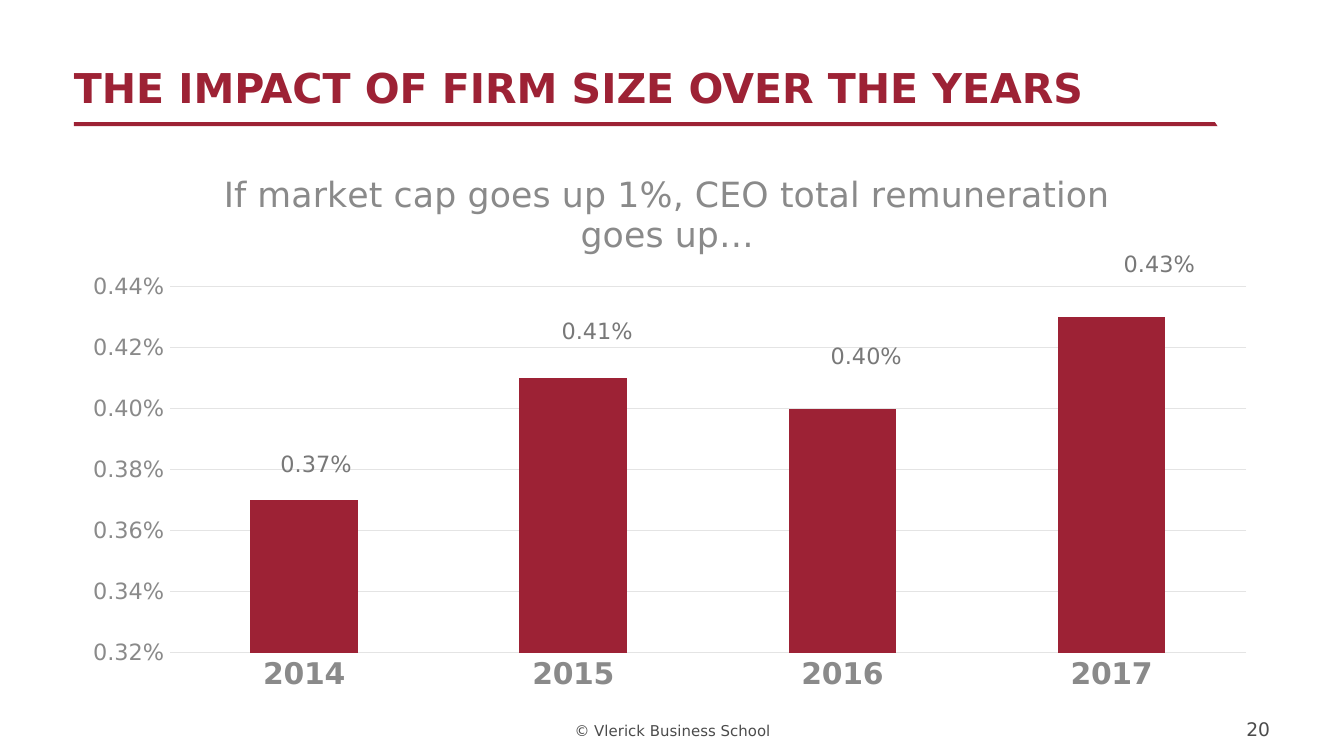
from lxml.etree import SubElement
from pptx import Presentation
from pptx.chart.data import CategoryChartData
from pptx.dml.color import RGBColor
from pptx.enum.chart import XL_CHART_TYPE, XL_LABEL_POSITION, XL_TICK_MARK
from pptx.enum.text import MSO_ANCHOR, MSO_AUTO_SIZE, PP_ALIGN
from pptx.oxml.ns import qn
from pptx.util import Inches, Pt

FONT = "DejaVu Sans"
RED = RGBColor(0x9D, 0x22, 0x35)
DARK_GRAY = RGBColor(0x4B, 0x4B, 0x4B)
AXIS_GRAY = RGBColor(0x8A, 0x8A, 0x8A)
LABEL_GRAY = RGBColor(0x78, 0x78, 0x78)
GRID_GRAY = RGBColor(0xE4, 0xE4, 0xE4)
PERCENT = "0.00%"

# Year, value, and the label's shift from the bar end as fractions of the chart
BARS = [
    ("2014", 0.0037, 0.01, -0.03),
    ("2015", 0.0041, 0.02, -0.05),
    ("2016", 0.0040, 0.02, -0.06),
    ("2017", 0.0043, 0.04, -0.06),
]


def style_font(font, size, color, bold=False):
    font.color.rgb = color
    for name, value in {"name": FONT, "size": Pt(size), "bold": bold}.items():
        setattr(font, name, value)


def fill_text(box, text, size, color, align, bold=False):
    frame = box.text_frame
    settings = {
        "word_wrap": True, "auto_size": MSO_AUTO_SIZE.NONE,
        "vertical_anchor": MSO_ANCHOR.BOTTOM,
        "margin_left": 0, "margin_right": 0, "margin_top": 0, "margin_bottom": 0,
    }
    for name, value in settings.items():
        setattr(frame, name, value)
    para = frame.paragraphs[0]
    para.alignment = align
    span = para.add_run()
    span.text = text
    style_font(span.font, size, color, bold)


def add_title(page, text):
    title = page.shapes.title
    place = {"left": 0.55, "top": 0, "width": 8.27, "height": 0.83}
    for name, value in place.items():
        setattr(title, name, Inches(value))
    fill_text(title, text, 22, RED, PP_ALIGN.LEFT, bold=True)


def add_title_rule(page):
    corners = [(0.55, 0.91), (9.04, 0.91), (9.06, 0.94), (0.55, 0.94)]
    points = [(Inches(x), Inches(y)) for x, y in corners]
    builder = page.shapes.build_freeform(*points[0])
    builder.add_line_segments(points[1:], close=True)
    rule = builder.convert_to_shape()
    rule.shadow.inherit = False
    rule.fill.solid()
    rule.fill.fore_color.rgb = RED
    rule.line.fill.background()


def add_footer(page, text, left, width, size, align):
    box = page.shapes.add_textbox(Inches(left), Inches(5.35), Inches(width), Inches(0.16))
    fill_text(box, text, size, DARK_GRAY, align)
    return box


def set_layout(element, before, **settings):
    """Place a manual layout ahead of the first child named in before."""
    for old in element.findall(qn("c:layout")):
        element.remove(old)
    layout = SubElement(element, qn("c:layout"))
    manual = SubElement(layout, qn("c:manualLayout"))
    for name, value in settings.items():
        SubElement(manual, qn(f"c:{name}")).set("val", str(value))
    follower = next(child for child in element if child.tag in map(qn, before))
    follower.addprevious(layout)


def style_axis(axis, size, bold=False):
    axis.major_tick_mark = axis.minor_tick_mark = XL_TICK_MARK.NONE
    axis.format.line.fill.background()
    style_font(axis.tick_labels.font, size, AXIS_GRAY, bold)


def style_value_axis(axis):
    style_axis(axis, 12)
    scale = {"minimum_scale": 0.0032, "maximum_scale": 0.0044, "major_unit": 0.0002}
    for name, value in scale.items():
        setattr(axis, name, value)
    axis.tick_labels.number_format = PERCENT
    axis.tick_labels.number_format_is_linked = False
    grid = axis.major_gridlines.format.line
    grid.color.rgb = GRID_GRAY
    grid.width = Pt(0.75)


def style_bars(plot):
    plot.gap_width = 150
    plot.vary_by_categories = False
    series = plot.series[0]
    series.format.fill.solid()
    series.format.fill.fore_color.rgb = RED
    labels = series.data_labels
    labels.show_value = True
    labels.number_format = PERCENT
    labels.number_format_is_linked = False
    labels.position = XL_LABEL_POSITION.OUTSIDE_END
    style_font(labels.font, 12, LABEL_GRAY)
    for leader in labels._element.findall(qn("c:showLeaderLines")):
        leader.set("val", "0")
    for index in range(len(BARS)):
        label = series.points[index].data_label
        style_font(label.font, 12, LABEL_GRAY)
        label.position = XL_LABEL_POSITION.OUTSIDE_END
    label_elements = labels._element.findall(qn("c:dLbl"))
    for element, (_, _, shift_x, shift_y) in zip(label_elements, BARS):
        set_layout(element, ["c:tx", "c:numFmt", "c:spPr", "c:txPr"], x=shift_x, y=shift_y)


def add_chart_title(chart, text):
    chart.has_title = True
    title = chart.chart_title
    title.include_in_layout = False
    span = title.text_frame.paragraphs[0].add_run()
    span.text = text
    style_font(span.font, 18.6, AXIS_GRAY)
    set_layout(title._element, ["c:overlay"], xMode="edge", yMode="edge", x=0.12, y=0.03)


def add_remuneration_chart(page):
    data = CategoryChartData(number_format=PERCENT)
    data.categories = [year for year, *_ in BARS]
    data.add_series("Series 1", [value for _, value, *_ in BARS])
    frame = page.shapes.add_chart(
        XL_CHART_TYPE.COLUMN_CLUSTERED,
        Inches(0.55), Inches(1.1), Inches(8.9), Inches(4.13), data)
    chart = frame.chart
    chart.has_legend = False
    style_font(chart.font, 10, DARK_GRAY)
    add_chart_title(chart, "If market cap goes up 1%, CEO total remuneration goes up…")
    style_axis(chart.category_axis, 16, bold=True)
    style_value_axis(chart.value_axis)
    style_bars(chart.plots[0])
    plot_area = chart.plots[0]._element.getparent()
    set_layout(plot_area, ["c:barChart"], layoutTarget="inner",
               xMode="edge", yMode="edge", x=0.08, y=0.25, w=0.9, h=0.66)


def main():
    deck = Presentation()
    # A 16:9 page
    deck.slide_width = Inches(10)
    deck.slide_height = deck.slide_width * 9 // 16
    page = deck.slides.add_slide(deck.slide_layouts[5])
    copyright_box = add_footer(page, "© Vlerick Business School", 3.94, 2.13, 8, PP_ALIGN.CENTER)
    copyright_box.text_frame.margin_bottom = Inches(0.01)
    add_title_rule(page)
    add_title(page, "THE IMPACT OF FIRM SIZE OVER THE YEARS")
    add_remuneration_chart(page)
    add_footer(page, "20", 8.9, 0.55, 10, PP_ALIGN.RIGHT)
    deck.save("out.pptx")


if __name__ == "__main__":
    main()
